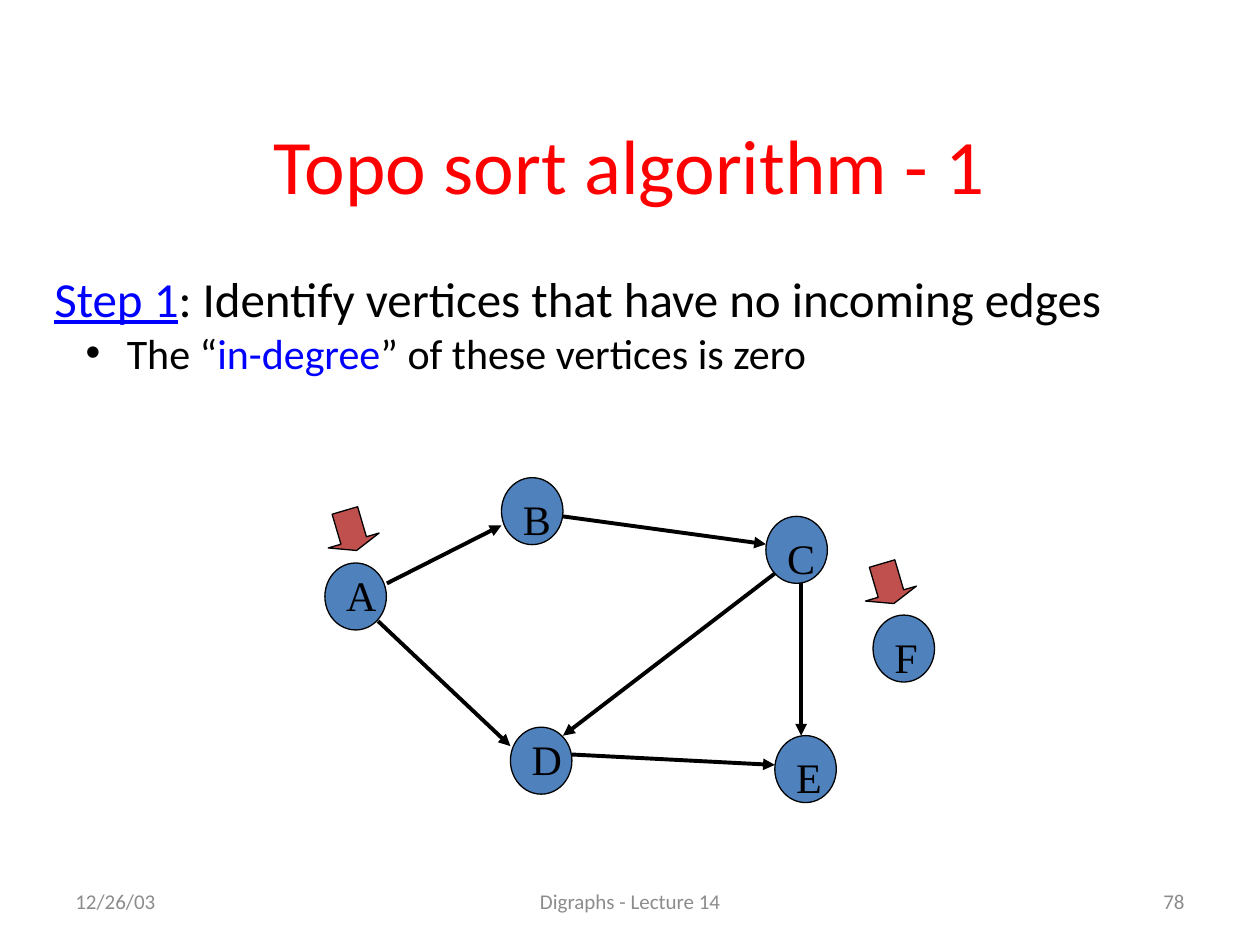
"""Build the slide on the first step of topological sort."""
import lxml.etree
import pptx
import pptx.dml.color
import pptx.enum.shapes
import pptx.enum.text
import pptx.oxml.ns
import pptx.util

Cm = pptx.util.Cm
Pt = pptx.util.Pt
Kind = pptx.enum.shapes.MSO_SHAPE
Side = pptx.enum.text.PP_ALIGN
Hold = pptx.enum.text.MSO_ANCHOR
Fit = pptx.enum.text.MSO_AUTO_SIZE
qn = pptx.oxml.ns.qn


def paint(form, code):
    form.rgb = pptx.dml.color.RGBColor.from_string(code)


def write(par, text, size=24, font="Calibri", code="000000", under=False, side=Side.LEFT):
    par.alignment = side
    run = par.add_run()
    run.text = text
    run.font.size = Pt(size)
    run.font.name = font
    run.font.underline = under
    paint(run.font.color, code)


deck = pptx.Presentation()
deck.slide_width, deck.slide_height = Cm(25.4), Cm(19.05)
slide = deck.slides.add_slide(deck.slide_layouts[1])
shapes = slide.shapes

title, body = slide.placeholders
for holder, box in ((title, (1.9, 1.7, 21.59, 3.18)), (body, (0.84, 5.28, 23.72, 2.46))):
    holder.left, holder.top, holder.width, holder.height = map(Cm, box)
    holder.text_frame.auto_size = Fit.NONE
write(title.text_frame.paragraphs[0], "Topo sort algorithm - 1",
      size=44, code="FF0000", side=Side.CENTER)

frame = body.text_frame
frame.word_wrap = False
step, point = frame.paragraphs[0], frame.add_paragraph()
write(step, "Step 1", size=28, code="0000FF", under=True)
write(step, ": Identify vertices that have no incoming edges", size=28)
point.level = 1
write(point, " The “")
write(point, "in-degree", code="0000FF")
write(point, "” of these vertices is zero")
for par, left, hang, mark in ((step, 0, 0, None), (point, 1.27, -0.64, "•")):
    par.space_before = Pt(0)
    props = par._p.get_or_add_pPr()
    props.set("marL", str(Cm(left)))
    props.set("indent", str(Cm(hang)))
    if mark:
        lxml.etree.SubElement(props, qn("a:buFont"), typeface="Arial")
        lxml.etree.SubElement(props, qn("a:buChar"), char=mark)
    else:
        lxml.etree.SubElement(props, qn("a:buNone"))

foot = (
    ("12/26/03", 1.27, 5.93, Side.LEFT),
    ("Digraphs - Lecture 14", 8.68, 8.05, Side.CENTER),
    ("78", 18.2, 5.93, Side.RIGHT),
)
for text, left, width, side in foot:
    frame = shapes.add_textbox(Cm(left), Cm(17.65), Cm(width), Cm(1.02)).text_frame
    frame.word_wrap = True
    frame.vertical_anchor = Hold.MIDDLE
    write(frame.paragraphs[0], text, size=12, code="8C8C8C", side=side)

edges = (
    (7.8, 11.76, 10.11, 10.59),
    (11.35, 10.41, 15.44, 10.97),
    (7.62, 12.52, 10.29, 15.04),
    (11.53, 15.21, 15.62, 15.42),
    (16.15, 11.76, 16.15, 14.83),
    (15.62, 11.56, 11.35, 14.83),
)
for ends in edges:
    edge = shapes.add_connector(pptx.enum.shapes.MSO_CONNECTOR.STRAIGHT, *map(Cm, ends))
    edge.line.width = Pt(2.25)
    paint(edge.line.fill.fore_color if edge.line.fill.solid() else edge.line.color, "000000")
    lxml.etree.SubElement(edge.line._get_or_add_ln(), qn("a:tailEnd"), type="triangle")
    lxml.etree.SubElement(edge._element.spPr, qn("a:effectLst"))

nodes = (
    ("A", 6.55, 11.35, 0),
    ("B", 10.11, 9.63, 0.2),
    ("C", 15.44, 10.41, 0.2),
    ("D", 10.29, 14.66, 0),
    ("E", 15.62, 14.83, 0.2),
    ("F", 17.6, 12.4, 0.2),
)
marks = [(Kind.OVAL, left, top, 1.24, 1.35, 0, "4F81BD") for name, left, top, drop in nodes]
marks += [(Kind.RIGHT_ARROW, left, top, 0.84, 1.07, 73.6, "C0504D")
          for left, top in ((6.65, 10.16), (17.48, 11.23))]
for kind, left, top, width, height, turn, code in marks:
    mark = shapes.add_shape(kind, Cm(left), Cm(top), Cm(width), Cm(height))
    mark.rotation = turn
    mark.shadow.inherit = False
    mark.fill.solid()
    paint(mark.fill.fore_color, code)
    paint(mark.line.color, "000000")
    mark.line.width = Pt(0.75)
    if kind == Kind.RIGHT_ARROW:
        mark.adjustments[0], mark.adjustments[1] = 0.5, 0.25

for name, left, top, drop in nodes:
    label = shapes.add_textbox(Cm(left + 0.18), Cm(top + drop), Cm(0.84), Cm(1.27))
    label.text_frame.word_wrap = True
    write(label.text_frame.paragraphs[0], name, font="Times New Roman")

deck.save("out.pptx")
